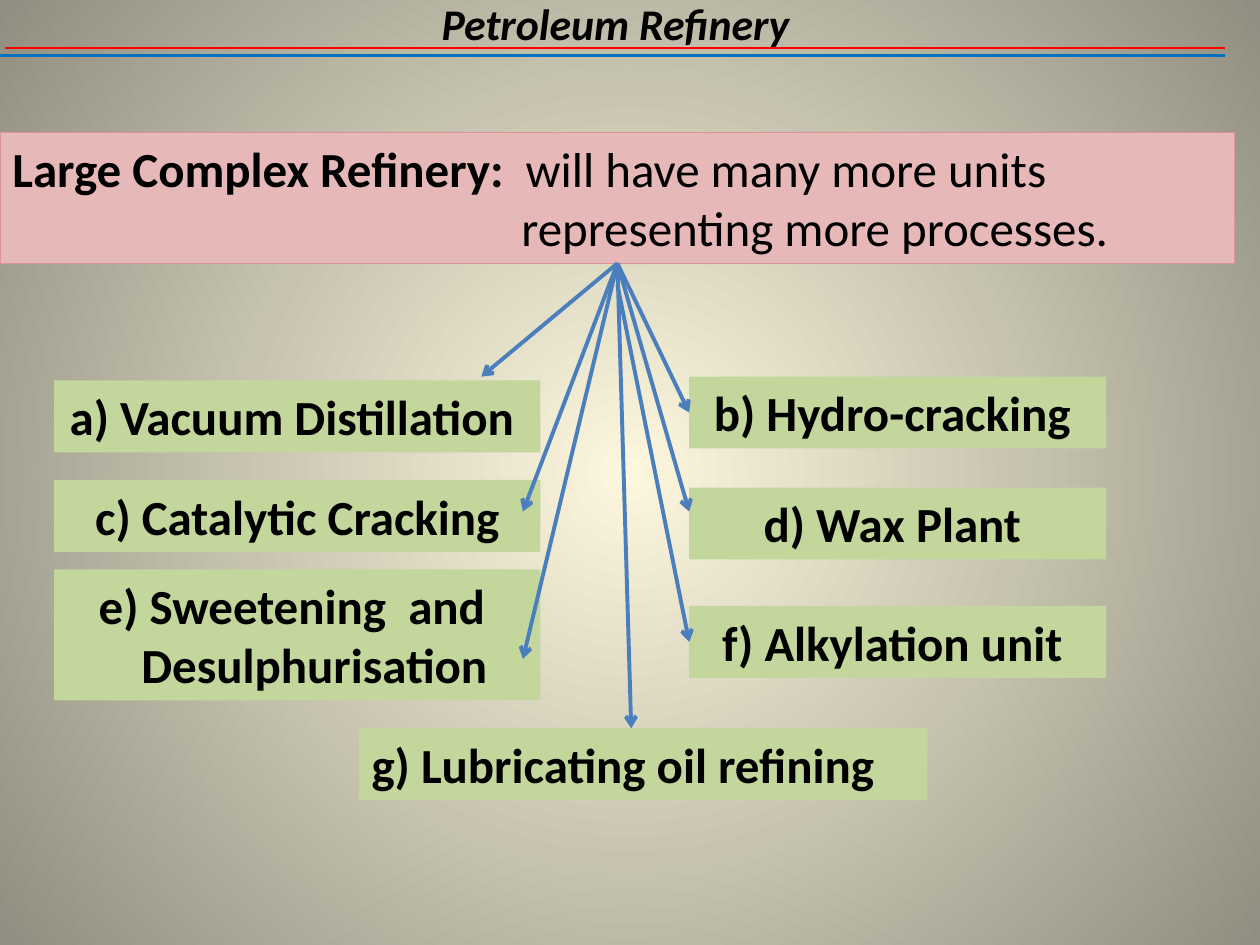
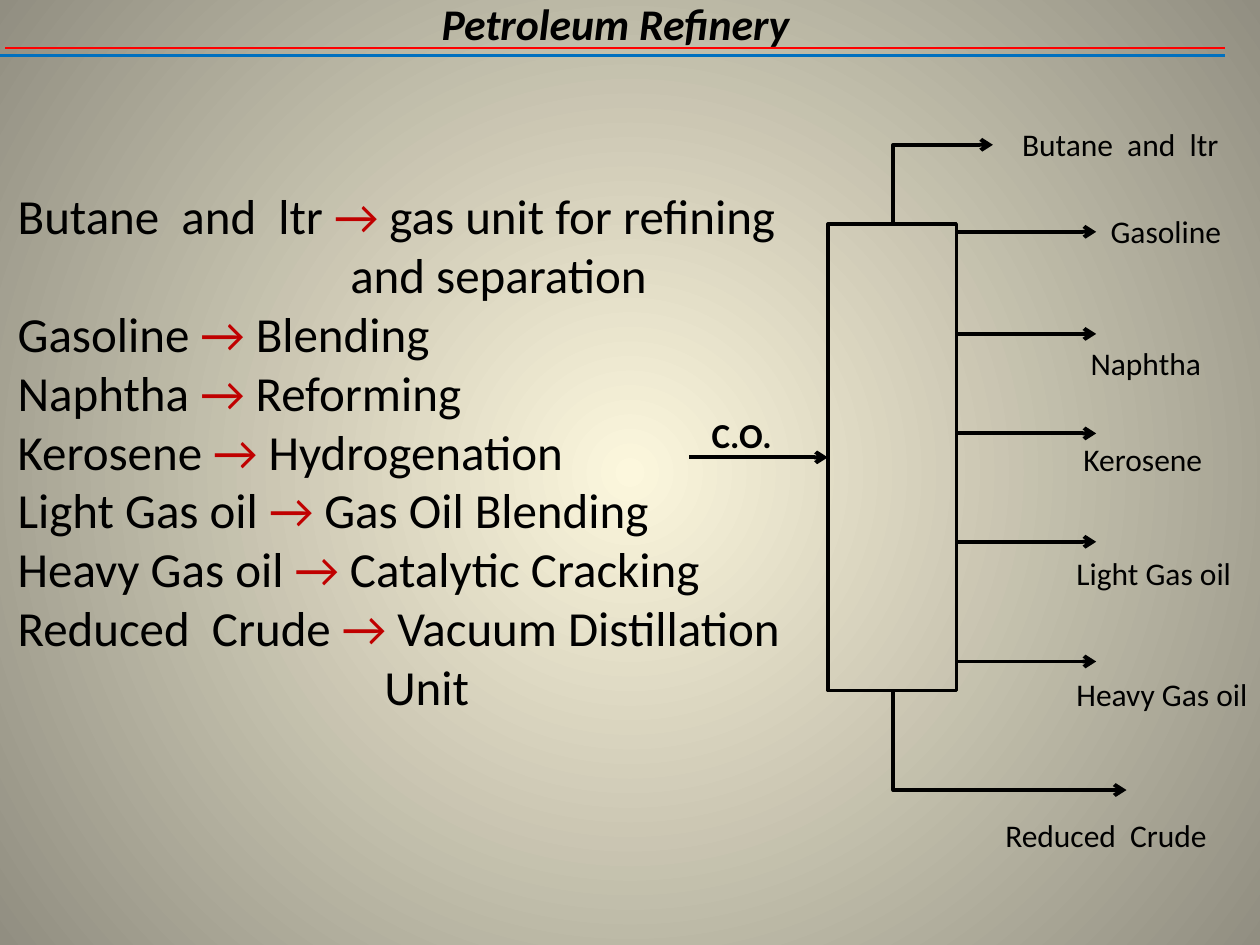
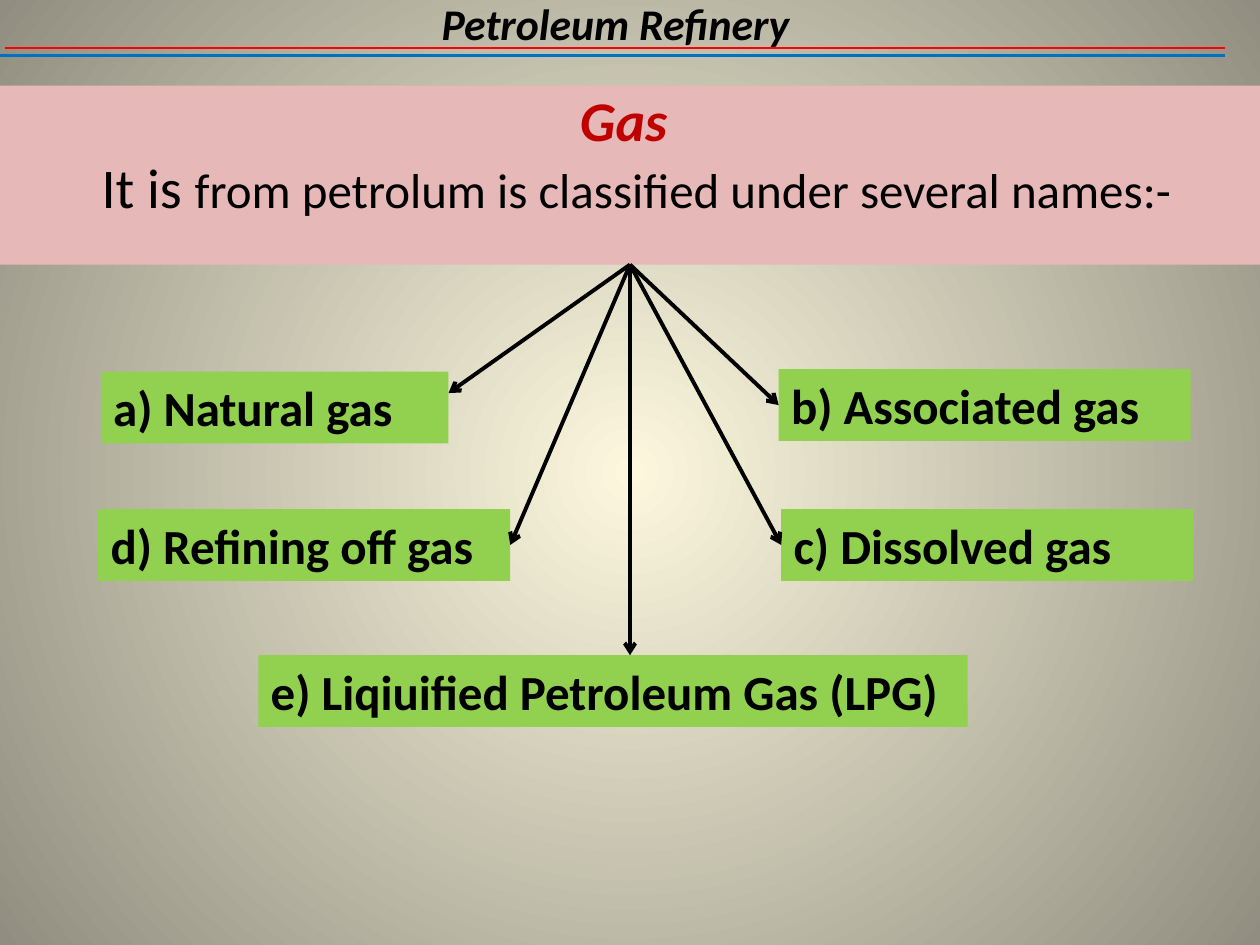
"""Build three slides on petroleum refining."""
from dataclasses import dataclass

from lxml.etree import SubElement
from pptx import Presentation
from pptx.dml.color import RGBColor
from pptx.enum.shapes import MSO_CONNECTOR, MSO_SHAPE
from pptx.enum.text import MSO_ANCHOR, MSO_AUTO_SIZE, PP_ALIGN
from pptx.oxml.ns import qn
from pptx.util import Inches, Pt

BLACK = RGBColor(0x00, 0x00, 0x00)
RED = RGBColor(0xFF, 0x00, 0x00)
DARK_RED = RGBColor(0xC0, 0x00, 0x00)
BLUE = RGBColor(0x00, 0x70, 0xC0)
ARROW_BLUE = RGBColor(0x4B, 0x7E, 0xBC)
PINK = RGBColor(0xE6, 0xB9, 0xB8)
PINK_EDGE = RGBColor(0xD9, 0x96, 0x94)
PALE_GREEN = RGBColor(0xC3, 0xD6, 0x9B)
GREEN = RGBColor(0x92, 0xD0, 0x50)
CREAM = RGBColor(0xFC, 0xF7, 0xDD)
STONE = RGBColor(0x91, 0x8E, 0x81)

COLUMNS, ROWS = 100, 75
TITLE_AND_CONTENT, TITLE_ONLY = 1, 5
TOP, LEFT, BOTTOM, RIGHT = range(4)
BODY = {"name": "Calibri", "size": Pt(28), "bold": False, "italic": False, "color": BLACK}
STRONG = BODY | {"bold": True}
HEADING = STRONG | {"size": Pt(25), "italic": True}
CAPTION = BODY | {"size": Pt(18)}


@dataclass
class Line:
    """One paragraph: runs of (text, format changes) and a left indent in columns."""
    runs: list
    indent: float = 0


def plain(text, indent=0):
    """Return a line made of a single run."""
    return Line([(text, {})], indent)


class Deck:
    """Hold the shared style and the current slide."""

    def __init__(self):
        """Start a presentation with the shared background."""
        self.presentation = Presentation()
        self.presentation.slide_width = Inches(10)
        self.presentation.slide_height = Inches(7.5)
        self.column = self.presentation.slide_width / COLUMNS
        self.row = self.presentation.slide_height / ROWS
        self.slide = None
        self.paint_background()

    def paint_background(self):
        """Give the slide master a round gradient."""
        master = self.presentation.slide_master
        fill = master.background.fill
        fill.gradient()
        for stop, color in zip(fill.gradient_stops, (CREAM, STONE)):
            stop.color.rgb = color
        gradient = next(master.element.iter(qn("a:gradFill")))
        gradient.remove(gradient.find(qn("a:lin")))
        circle = SubElement(gradient, qn("a:path"), {"path": "circle"})
        SubElement(circle, qn("a:fillToRect"), dict.fromkeys("ltrb", "50000"))

    def across(self, columns):
        """Turn columns into a length."""
        return round(columns * self.column)

    def down(self, rows):
        """Turn rows into a length."""
        return round(rows * self.row)

    def box(self, left, top, width, height):
        """Turn a grid area into four lengths."""
        return self.across(left), self.down(top), self.across(width), self.down(height)

    def add_slide(self, layout=TITLE_ONLY):
        """Add a slide with its title and double rule."""
        layouts = self.presentation.slide_layouts
        self.slide = self.presentation.slides.add_slide(layouts[layout])
        self.fill_placeholder(0, (0.4, -0.8, 96.9, 5.2), [plain("Petroleum Refinery")],
                              HEADING, PP_ALIGN.CENTER)
        self.line((0, 4.4), (97.2, 4.4), BLUE, 1.5)
        self.line((0.4, 3.8), (97.2, 3.8), RED, 1.5)

    def set_text(self, frame, lines, style=BODY, alignment=PP_ALIGN.LEFT, anchor=MSO_ANCHOR.TOP):
        """Put lines of formatted runs into a text frame."""
        settings = {"word_wrap": True, "auto_size": MSO_AUTO_SIZE.NONE, "vertical_anchor": anchor}
        for name, value in settings.items():
            setattr(frame, name, value)
        for number, line in enumerate(lines):
            paragraph = frame.add_paragraph() if number else frame.paragraphs[0]
            paragraph.alignment = alignment
            paragraph.space_before = Pt(0)
            properties = paragraph._p.get_or_add_pPr()
            properties.set("marL", str(self.across(line.indent)))
            properties.set("indent", "0")
            SubElement(properties, qn("a:buNone"))
            for text, changes in line.runs:
                run = paragraph.add_run()
                run.text = text
                values = style | changes
                run.font.color.rgb = values.pop("color")
                for name, value in values.items():
                    setattr(run.font, name, value)

    def fill_placeholder(self, index, area, lines, style=BODY, alignment=PP_ALIGN.LEFT):
        """Move a placeholder and fill it with text."""
        shape = self.slide.placeholders[index]
        for name, value in zip(("left", "top", "width", "height"), self.box(*area)):
            setattr(shape, name, value)
        self.set_text(shape.text_frame, lines, style, alignment, MSO_ANCHOR.MIDDLE)

    def caption(self, area, text, alignment=PP_ALIGN.RIGHT, style=CAPTION):
        """Add a short text box."""
        shape = self.slide.shapes.add_textbox(*self.box(*area))
        self.set_text(shape.text_frame, [plain(text)], style, alignment)

    def rectangle(self, area, lines=(), fill=None, edge=None, edge_width=0.75,
                  style=STRONG, alignment=PP_ALIGN.LEFT):
        """Add a rectangle with optional fill, edge and text."""
        shape = self.slide.shapes.add_shape(MSO_SHAPE.RECTANGLE, *self.box(*area))
        shape.shadow.inherit = False
        for target, color in ((shape.fill, fill), (shape.line.fill, edge)):
            if color is None:
                target.background()
            else:
                target.solid()
                target.fore_color.rgb = color
        if edge is not None:
            shape.line.width = Pt(edge_width)
        self.set_text(shape.text_frame, lines, style, alignment)
        return shape

    def line(self, begin, end, color=BLACK, width=2.25, kind=MSO_CONNECTOR.STRAIGHT):
        """Add a connector between two grid points."""
        points = [length for x, y in (begin, end) for length in (self.across(x), self.down(y))]
        connector = self.slide.shapes.add_connector(kind, *points)
        connector.line.color.rgb = color
        connector.line.width = Pt(width)
        SubElement(connector._element.spPr, qn("a:effectLst"))
        return connector

    def arrow(self, begin, end, color=BLACK, source=None, target=None, kind=MSO_CONNECTOR.STRAIGHT):
        """Add an arrow, joined to (shape, side) pairs where given."""
        connector = self.line(begin, end, color, kind=kind)
        outline = connector._element.spPr.find(qn("a:ln"))
        SubElement(outline, qn("a:tailEnd"), {"type": "arrow"})
        if source:
            connector.begin_connect(*source)
        if target:
            connector.end_connect(*target)
        return connector

    def elbow(self, begin, end):
        """Add an arrow that runs vertically and then to the right."""
        (x1, y1), (x2, y2) = begin, end
        middle_x, middle_y = (x1 + x2) / 2, (y1 + y2) / 2
        half_width, half_height = abs(y2 - y1) / 2, (x2 - x1) / 2
        if y2 > y1:
            turn = 270
        else:
            turn, half_height = 90, -half_height
        connector = self.arrow((middle_x + half_width, middle_y - half_height),
                               (middle_x - half_width, middle_y + half_height),
                               kind=MSO_CONNECTOR.ELBOW)
        properties = connector._element.spPr
        properties.find(qn("a:xfrm")).set("rot", str(turn * 60000))
        properties.find(qn("a:prstGeom")).set("prst", "bentConnector2")


def add_complex_refinery(deck):
    """Show the units of a large refinery."""
    deck.add_slide()
    panel = deck.rectangle(
        (0, 10.5, 98, 10.4),
        [Line([("Large Complex Refinery:  ", {"bold": True}), ("will have many more units", {})]),
         plain("representing more processes.", 40.4)],
        PINK, PINK_EDGE, style=BODY)
    left, left_width, right, right_width, height = 4.3, 38.6, 54.7, 33.1, 5.7
    units = [
        ((left, 30.2, left_width, height), [plain("a) Vacuum Distillation ")]),
        ((right, 29.9, right_width, height), [plain("b) Hydro-cracking ")]),
        ((left, 38.1, left_width, height), [plain("c) Catalytic Cracking")]),
        ((right, 38.7, right_width, height), [plain("d) Wax Plant ")]),
        ((left, 45.2, left_width, 10.4),
         [plain("e) Sweetening  and "), plain("Desulphurisation", 2.7)]),
        ((right, 48.1, right_width, height), [plain("f) Alkylation unit ")]),
    ]
    boxes = [deck.rectangle(area, lines, PALE_GREEN, alignment=PP_ALIGN.CENTER)
             for area, lines in units]
    deck.rectangle((28.5, 57.8, 45.1, height), [plain("g) Lubricating oil refining")], PALE_GREEN)
    hub, source = (49, 20.9), (panel, BOTTOM)
    for end in ((38.2, 29.9), (41.5, 40.6), (41.5, 52.3), (right, 40.6), (50.1, 57.8)):
        deck.arrow(hub, end, ARROW_BLUE, source)
    deck.arrow(hub, (right, 32.8), ARROW_BLUE, source, (boxes[1], LEFT))
    deck.arrow((49, 22.6), (right, 51), ARROW_BLUE, target=(boxes[5], LEFT))


def add_distillation_products(deck):
    """Show where each product of the crude oil column goes."""
    deck.add_slide(TITLE_AND_CONTENT)
    uses = [
        ("Butane  and  ltr", "gas unit for refining", plain("and separation", 26.4)),
        ("Gasoline", "Blending", None),
        ("Naphtha", "Reforming", None),
        ("Kerosene", "Hydrogenation", None),
        ("Light Gas oil", "Gas Oil Blending", None),
        ("Heavy Gas oil", "Catalytic Cracking", None),
        ("Reduced  Crude", "Vacuum Distillation", plain("Unit", 29.1)),
    ]
    lines = []
    for product, use, continuation in uses:
        lines.append(Line([(f"{product} ", {}), ("→", {"color": DARK_RED}), (f" {use}", {})]))
        if continuation:
            lines.append(continuation)
    deck.fill_placeholder(1, (0.4, 5.2, 90, 61.1), lines)

    tower = deck.rectangle((65.7, 17.8, 10.2, 37), edge=BLACK, edge_width=2)
    deck.arrow((54.7, 36.3), (65.7, 36.3), target=(tower, LEFT))
    deck.caption((55.5, 32.3, 7.9, 4.4), "C.O.", PP_ALIGN.LEFT, STRONG | {"size": Pt(20)})
    for row in (18.4, 26.5, 34.4, 43, 52.5):
        deck.arrow((76, row), (87, row))
    deck.elbow((70.9, 54.8), (89.4, 62.7))
    deck.elbow((70.9, 17.8), (78.8, 11.5))

    areas = [(78.8, 9.4, 18.9), (87, 16.3, 10.9), (85.4, 26.8, 10.9), (84.6, 34.4, 11.8),
             (82.3, 43.5, 16.4), (84, 53.1, 16), (78.8, 64.3, 21.2)]
    for (product, *_), area in zip(uses, areas):
        alignment = PP_ALIGN.LEFT if product == uses[-1][0] else PP_ALIGN.RIGHT
        deck.caption((*area, 4), product, alignment)


def add_gas_names(deck):
    """Show the names under which gas is classified."""
    deck.add_slide()
    panel = deck.rectangle(
        (0, 6.8, 100, 14.2),
        [Line([("Gas ", {"size": Pt(32), "bold": True, "italic": True, "color": DARK_RED})]),
         Line([("It is ", {"size": Pt(32)}),
               ("from petrolum is classified under several names:-", {})], 1)],
        PINK, style=BODY, alignment=PP_ALIGN.CENTER)
    panel.text_frame.margin_top = 0
    hub, source = (50, 21), (panel, BOTTOM)
    gases = [
        ("a) Natural gas", (8, 29.5, 27.6), (35.6, 31.2), None),
        ("b) Associated gas", (61.8, 29.3, 32.7), (61.8, 32.2), LEFT),
        ("c) Dissolved gas", (62, 40.4, 32.7), (62, 43.3), LEFT),
        ("d) Refining off gas", (7.8, 40.4, 32.7), (40.5, 43.3), RIGHT),
        ("e) Liqiuified Petroleum Gas (LPG)", (20.5, 52, 56.3), (50, 52), None),
    ]
    for name, area, end, side in gases:
        box = deck.rectangle((*area, 5.7), [plain(name)], GREEN)
        deck.arrow(hub, end, source=source, target=None if side is None else (box, side))


def main():
    """Build and save the presentation."""
    deck = Deck()
    add_complex_refinery(deck)
    add_distillation_products(deck)
    add_gas_names(deck)
    deck.presentation.save("out.pptx")


if __name__ == "__main__":
    main()
